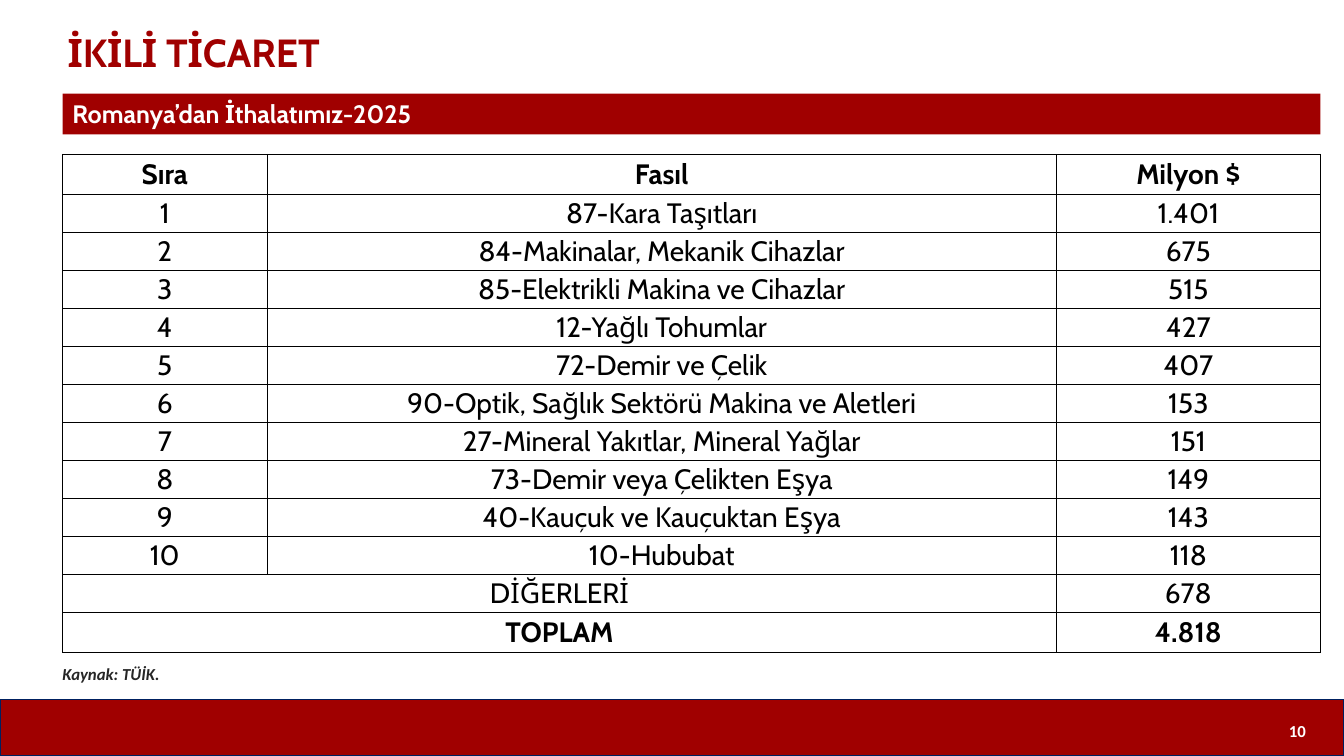
from lxml import etree
from pptx import Presentation
from pptx.dml.color import RGBColor
from pptx.enum import shapes, text
from pptx.oxml import ns
from pptx.util import Pt

RED, WHITE, BLACK = "A00000", "FFFFFF", "000000"
LEFT, WIDTH = 44.64, 898.56
MIDDLE = text.MSO_ANCHOR.MIDDLE
CENTER = text.PP_ALIGN.CENTER
SHAPE = shapes.MSO_SHAPE

COLUMNS = [146.16, 563.76, 188.64]
HEADER = ("Sıra", "Fasıl", "Milyon $")
CHAPTERS = [
    ("87-Kara Taşıtları", "1.401"),
    ("84-Makinalar, Mekanik Cihazlar", "675"),
    ("85-Elektrikli Makina ve Cihazlar", "515"),
    ("12-Yağlı Tohumlar", "427"),
    ("72-Demir ve Çelik", "407"),
    ("90-Optik, Sağlık Sektörü Makina ve Aletleri", "153"),
    ("27-Mineral Yakıtlar, Mineral Yağlar", "151"),
    ("73-Demir veya Çelikten Eşya", "149"),
    ("40-Kauçuk ve Kauçuktan Eşya", "143"),
    ("10-Hububat", "118"),
]
TOTALS = [("DİĞERLERİ", "678"), ("TOPLAM", "4.818")]


def color(hex_value):
    return RGBColor.from_string(hex_value)


def apply(target, values):
    """Set each named attribute of the target."""
    for name, value in values.items():
        setattr(target, name, value)


def margins(left, top, right, bottom):
    return {"margin_left": Pt(left), "margin_top": Pt(top),
            "margin_right": Pt(right), "margin_bottom": Pt(bottom)}


class TradeSlide:
    def __init__(self, presentation):
        self.slide = presentation.slides.add_slide(presentation.slide_layouts[5])
        self.shapes = self.slide.shapes

    def set_text(self, frame, words, size, ink, font="Cabin", bold=True,
                 italic=False, **paragraph_format):
        paragraph = frame.paragraphs[0]
        paragraph.text = words
        apply(paragraph, paragraph_format)
        apply(paragraph.font, {"name": font, "size": Pt(size),
                               "bold": bold, "italic": italic})
        paragraph.font.color.rgb = color(ink)

    def box(self, kind, box, fill=None, line=None):
        shape = self.shapes.add_shape(kind, *map(Pt, box))
        shape.shadow.inherit = False
        if fill:
            shape.fill.solid()
            shape.fill.fore_color.rgb = color(fill)
        else:
            shape.fill.background()
        if line:
            shape.line.color.rgb = color(line)
            shape.line.width = Pt(1)
        else:
            shape.line.fill.background()
        return shape

    def title(self, words, box):
        title = self.shapes.title
        apply(title, dict(zip(("left", "top", "width", "height"), map(Pt, box))))
        apply(title.text_frame, {"word_wrap": True, "vertical_anchor": MIDDLE,
                                 "auto_size": text.MSO_AUTO_SIZE.NONE,
                                 **margins(3.6, 3.6, 3.6, 3.6)})
        self.set_text(title.text_frame, words, 28, RED,
                      alignment=text.PP_ALIGN.LEFT, line_spacing=0.9)

    def banner(self, words, box):
        frame = self.box(SHAPE.RECTANGLE, box, RED).text_frame
        apply(frame, {"word_wrap": True, "vertical_anchor": text.MSO_ANCHOR.TOP})
        self.set_text(frame, words, 18, WHITE, alignment=text.PP_ALIGN.JUSTIFY)

    def source_note(self, words, box):
        frame = self.shapes.add_textbox(*map(Pt, box)).text_frame
        apply(frame, {"word_wrap": True, **margins(0, 2.88, 0, 0)})
        self.set_text(frame, words, 12, "262626", "Calibri", italic=True)

    def footer(self, number):
        self.box(SHAPE.RECTANGLE, (0, 499.68, 960, 40.32), RED, "002060")
        tab = self.box(SHAPE.ROUND_2_SAME_RECTANGLE, (909.36, 499.68, 34.56, 42.48))
        tab.text_frame.vertical_anchor = MIDDLE
        self.set_text(tab.text_frame, number, 12, WHITE, "Calibri", alignment=CENTER)

    def cell_borders(self, cell):
        properties = cell._tc.get_or_add_tcPr()
        for side in ("a:lnL", "a:lnR", "a:lnT", "a:lnB"):
            line = etree.SubElement(properties, ns.qn(side), w=str(Pt(0.5)))
            fill = etree.SubElement(line, ns.qn("a:solidFill"))
            etree.SubElement(fill, ns.qn("a:srgbClr"), val=BLACK)

    def table(self, rows, top, edge_height, row_height):
        """Draw the rows; the first and last are bold and a little taller."""
        last = len(rows) - 1
        height = 2 * edge_height + (last - 1) * row_height
        table = self.shapes.add_table(len(rows), len(COLUMNS), Pt(LEFT), Pt(top),
                                      Pt(WIDTH), Pt(height)).table
        apply(table, {"first_row": False, "horz_banding": False})
        for column, width in zip(table.columns, COLUMNS):
            column.width = Pt(width)
        for i, values in enumerate(rows):
            edge = i in (0, last)
            table.rows[i].height = Pt(edge_height if edge else row_height)
            for j, value in enumerate(values):
                cell = table.cell(i, j)
                apply(cell, {"vertical_anchor": MIDDLE, **margins(0.7, 0.7, 0.7, 0)})
                self.cell_borders(cell)
                cell.fill.background()
                if value is None:
                    table.cell(i, j - 1).merge(cell)
                else:
                    self.set_text(cell.text_frame, value, 20, BLACK, bold=edge,
                                  alignment=CENTER)


def main():
    presentation = Presentation()
    apply(presentation, {"slide_width": Pt(960), "slide_height": Pt(540)})
    trade = TradeSlide(presentation)
    trade.footer("10")
    trade.title("İKİLİ TİCARET", (LEFT, 0, 568.8, 77.76))
    trade.banner("Romanya’dan İthalatımız-2025", (LEFT, 66.96, WIDTH, 29.08))
    trade.source_note("Kaynak: TÜİK.", (LEFT, 470.88, 276.48, 25.92))
    ranked = [(str(rank), *chapter) for rank, chapter in enumerate(CHAPTERS, 1)]
    totals = [(label, None, amount) for label, amount in TOTALS]
    trade.table([HEADER, *ranked, *totals], 110.16, 28.6, 27.14)
    presentation.save("out.pptx")


if __name__ == "__main__":
    main()
